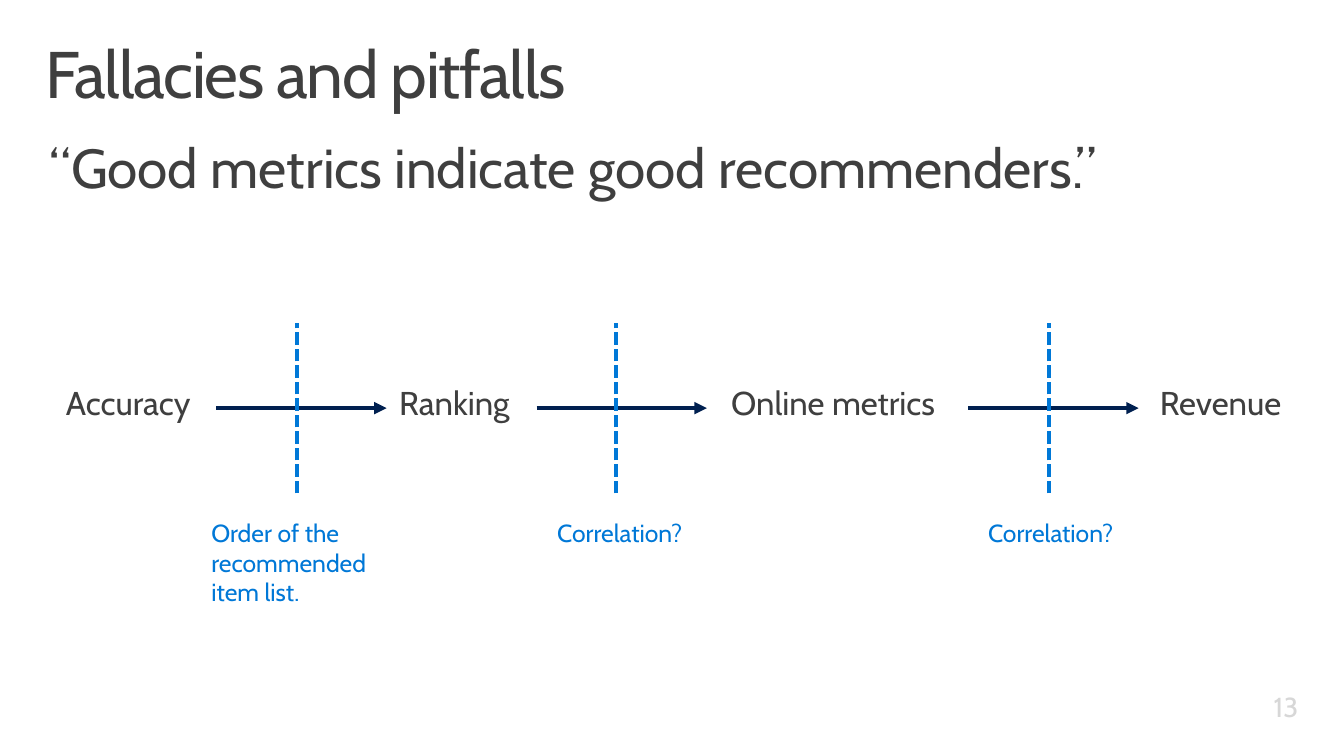
from dataclasses import dataclass

from lxml.etree import SubElement
from pptx import Presentation
from pptx.dml.color import RGBColor
from pptx.enum.dml import MSO_LINE
from pptx.enum.shapes import MSO_CONNECTOR
from pptx.enum.text import MSO_ANCHOR, MSO_AUTO_SIZE, PP_ALIGN
from pptx.oxml.ns import qn
from pptx.util import Pt

# Content
TITLE = "Fallacies and pitfalls"
CLAIM = "“Good metrics indicate good recommenders.”"
PAGE_NUMBER = "13"
STAGES = [  # label, left, width
    ("Accuracy", 41, 110),
    ("Ranking", 283.7, 101),
    ("Online metrics", 525.6, 169),
    ("Revenue", 838, 105),
]
GAPS = [  # note, note left, arrow left, divider x
    ("Order of the recommended item list.", 146.9, 157.7, 216.7),
    ("Correlation?", 398.9, 391, 448.6),
    ("Correlation?", 712.8, 705.6, 764.6),
]


@dataclass(frozen=True)
class Theme:
    font: str = "Cabin"
    text: str = "3F3F3F"
    arrow: str = "002050"
    accent: str = "0078D7"
    muted: str = "D7D7D7"
    title_size: int = 48
    claim_size: int = 40
    stage_size: int = 24
    number_size: int = 20
    note_size: int = 18


THEME = Theme()
SLIDE_SIZE = (979.2, 550.8)
STAGE_TOP, STAGE_HEIGHT = 275, 36
NOTE_TOP, NOTE_WIDTH = 373.7, 144.7
LINE_LENGTH, LINE_WIDTH = 124, 3
ARROW_Y = 297.4
DIVIDER_TOP = ARROW_Y - LINE_LENGTH / 2


def write(shape, text, size, color, insets=(7.2, 3.6, 7.2, 3.6), wrap=True):
    frame = shape.text_frame
    frame.text = text
    frame.word_wrap = wrap
    frame.auto_size = MSO_AUTO_SIZE.NONE
    frame.vertical_anchor = MSO_ANCHOR.TOP
    frame.margin_left, frame.margin_top, frame.margin_right, frame.margin_bottom = map(Pt, insets)
    paragraph = frame.paragraphs[0]
    paragraph.alignment = PP_ALIGN.LEFT
    paragraph.font.name = THEME.font
    paragraph.font.size = Pt(size)
    paragraph.font.color.rgb = RGBColor.from_string(color)
    return paragraph


def place(shape, left, top, width, height):
    shape.left, shape.top, shape.width, shape.height = map(Pt, (left, top, width, height))


def add_line(slide, start, end, color):
    connector = slide.shapes.add_connector(MSO_CONNECTOR.STRAIGHT, *map(Pt, start + end))
    connector.line.color.rgb = RGBColor.from_string(color)
    connector.line.width = Pt(LINE_WIDTH)
    SubElement(connector._element.spPr, qn("a:effectLst"))
    return connector


def main():
    presentation = Presentation()
    presentation.slide_width, presentation.slide_height = map(Pt, SLIDE_SIZE)
    slide = presentation.slides.add_slide(presentation.slide_layouts[1])
    shapes = slide.shapes

    # Title and claim
    title, claim = shapes.title, slide.placeholders[1]
    place(title, 21.6, 23, 936, 72)
    paragraph = write(title, TITLE, THEME.title_size, THEME.text, (11.5, 7.2, 11.5, 7.2))
    paragraph.line_spacing = 0.9
    paragraph.runs[0].font._element.set("spc", "-100")

    place(claim, 21.6, 95.8, 936, 58.3)
    paragraph = write(claim, CLAIM, THEME.claim_size, THEME.text, (14.4, 7.2, 11.5, 7.2))
    paragraph.line_spacing = 0.9
    paragraph.space_before = Pt(0)
    properties = paragraph._p.get_or_add_pPr()
    properties.set("marL", "0")
    properties.set("indent", "0")
    bullet_none = SubElement(properties, qn("a:buNone"))
    properties.find(qn("a:defRPr")).addprevious(bullet_none)

    # Page number
    number = shapes.add_textbox(*map(Pt, (737.3, 501.8, 220.3, 29.5)))
    paragraph = write(number, PAGE_NUMBER, THEME.number_size, THEME.muted, (7.2, 3.6, 11.5, 3.6))
    paragraph.alignment = PP_ALIGN.RIGHT
    paragraph.line_spacing = 0.9
    paragraph.space_after = Pt(6)
    number.text_frame.vertical_anchor = MSO_ANCHOR.MIDDLE

    # Stages of the chain
    for label, left, width in STAGES:
        box = shapes.add_textbox(*map(Pt, (left, STAGE_TOP, width, STAGE_HEIGHT)))
        write(box, label, THEME.stage_size, THEME.text, wrap=False)

    # Arrows, dashed dividers and notes between the stages
    for note, note_left, arrow_left, divider_x in GAPS:
        arrow = add_line(slide, (arrow_left, ARROW_Y), (arrow_left + LINE_LENGTH, ARROW_Y), THEME.arrow)
        SubElement(arrow.line._get_or_add_ln(), qn("a:tailEnd"), type="triangle")

        divider = add_line(slide, (divider_x, DIVIDER_TOP + LINE_LENGTH), (divider_x, DIVIDER_TOP), THEME.accent)
        divider.line.dash_style = MSO_LINE.SQUARE_DOT

        lines = 3 if len(note) > 20 else 1
        note_height = 7.2 + 21.8 * lines
        box = shapes.add_textbox(*map(Pt, (note_left, NOTE_TOP, NOTE_WIDTH, note_height)))
        write(box, note, THEME.note_size, THEME.accent)

    presentation.save("out.pptx")


if __name__ == "__main__":
    main()
